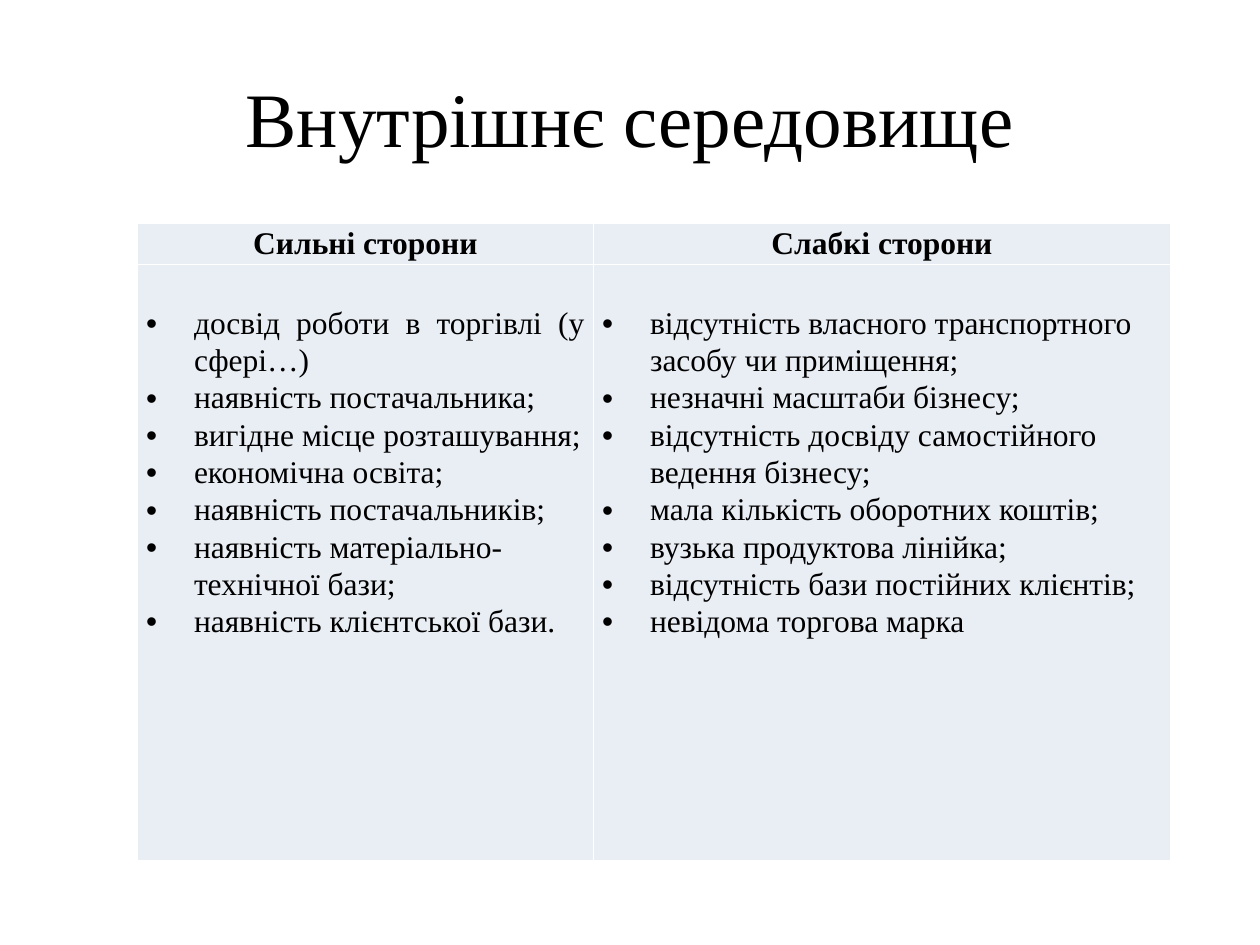
"""Build a slide listing the strengths and weaknesses of a business."""
from lxml import etree
from pptx import Presentation
from pptx.dml.color import RGBColor
from pptx.enum import text
from pptx.oxml.ns import qn
from pptx.util import Inches, Pt

BLACK = RGBColor(0x00, 0x00, 0x00)
WHITE = RGBColor(0xFF, 0xFF, 0xFF)
PALE_BLUE = RGBColor(0xE9, 0xED, 0xF4)
TYPEFACE = "Times New Roman"
ALIGN = text.PP_ALIGN

STRENGTHS = [
    "досвід роботи в торгівлі (у сфері…)",
    "наявність постачальника;",
    "вигідне місце розташування;",
    "економічна освіта;",
    "наявність постачальників;",
    "наявність матеріально-технічної бази;",
    "наявність клієнтської бази.",
]
WEAKNESSES = [
    "відсутність власного транспортного засобу чи приміщення;",
    "незначні масштаби бізнесу;",
    "відсутність досвіду самостійного ведення бізнесу;",
    "мала кількість оборотних коштів;",
    "вузька продуктова лінійка;",
    "відсутність бази постійних клієнтів;",
    "невідома торгова марка",
]
COLUMNS = [
    ("Сильні сторони", STRENGTHS, 2, 3.62),
    ("Слабкі сторони", WEAKNESSES, 0, 4.58),
]


def set_font(paragraph, size, bold=False):
    font = paragraph.font
    font.name, font.size, font.bold = TYPEFACE, Pt(size), bold
    font.color.rgb = BLACK


def add_bullet(paragraph):
    properties = paragraph._p.get_or_add_pPr()
    properties.set("marL", str(Inches(0.38)))
    properties.set("indent", str(-Inches(0.38)))
    etree.SubElement(properties, qn("a:buFont"), typeface="Arial")
    etree.SubElement(properties, qn("a:buChar"), char="•")


def style_cell(cell, top_margin):
    cell.margin_left = cell.margin_right = Inches(0.07)
    cell.margin_top, cell.margin_bottom = Inches(top_margin), 0
    properties = cell._tc.get_or_add_tcPr()
    for side in ("lnL", "lnR", "lnT", "lnB"):
        border = etree.SubElement(properties, qn(f"a:{side}"), w=str(Pt(1)))
        paint = etree.SubElement(border, qn("a:solidFill"))
        etree.SubElement(paint, qn("a:srgbClr"), val=str(WHITE))
    cell.fill.solid()
    cell.fill.fore_color.rgb = PALE_BLUE


def fill_heading(cell, heading):
    style_cell(cell, 0.01)
    paragraph = cell.text_frame.paragraphs[0]
    paragraph.text = heading
    paragraph.alignment = ALIGN.CENTER
    paragraph.line_spacing = 1.07
    set_font(paragraph, 18, bold=True)


def fill_list(cell, items, justified_count):
    style_cell(cell, 0.31)
    cell.text_frame.text = "\n".join(items)
    for index, paragraph in enumerate(cell.text_frame.paragraphs):
        add_bullet(paragraph)
        paragraph.alignment = ALIGN.JUSTIFY if index < justified_count else ALIGN.LEFT
        paragraph.line_spacing = 1.07
        set_font(paragraph, 18)


def add_title(slide, wording):
    title = slide.shapes.add_textbox(Inches(0.5), Inches(0.3), Inches(9), Inches(1.25))
    frame = title.text_frame
    frame.word_wrap = True
    frame.vertical_anchor = text.MSO_ANCHOR.MIDDLE
    paragraph = frame.paragraphs[0]
    paragraph.text = wording
    paragraph.alignment = ALIGN.CENTER
    set_font(paragraph, 44)


def add_comparison(slide):
    table = slide.shapes.add_table(
        2, len(COLUMNS), Inches(1.09), Inches(1.77), Inches(8.2), Inches(5.03)
    ).table
    table.first_row = table.horz_banding = False
    table.rows[0].height, table.rows[1].height = Inches(0.3), Inches(4.73)
    for index, (heading, items, justified_count, width) in enumerate(COLUMNS):
        table.columns[index].width = Inches(width)
        fill_heading(table.cell(0, index), heading)
        fill_list(table.cell(1, index), items, justified_count)


def main():
    presentation = Presentation()
    presentation.slide_width, presentation.slide_height = Inches(10), Inches(7.5)
    slide = presentation.slides.add_slide(presentation.slide_layouts[6])
    add_title(slide, "Внутрішнє середовище")
    add_comparison(slide)
    presentation.save("out.pptx")


if __name__ == "__main__":
    main()
